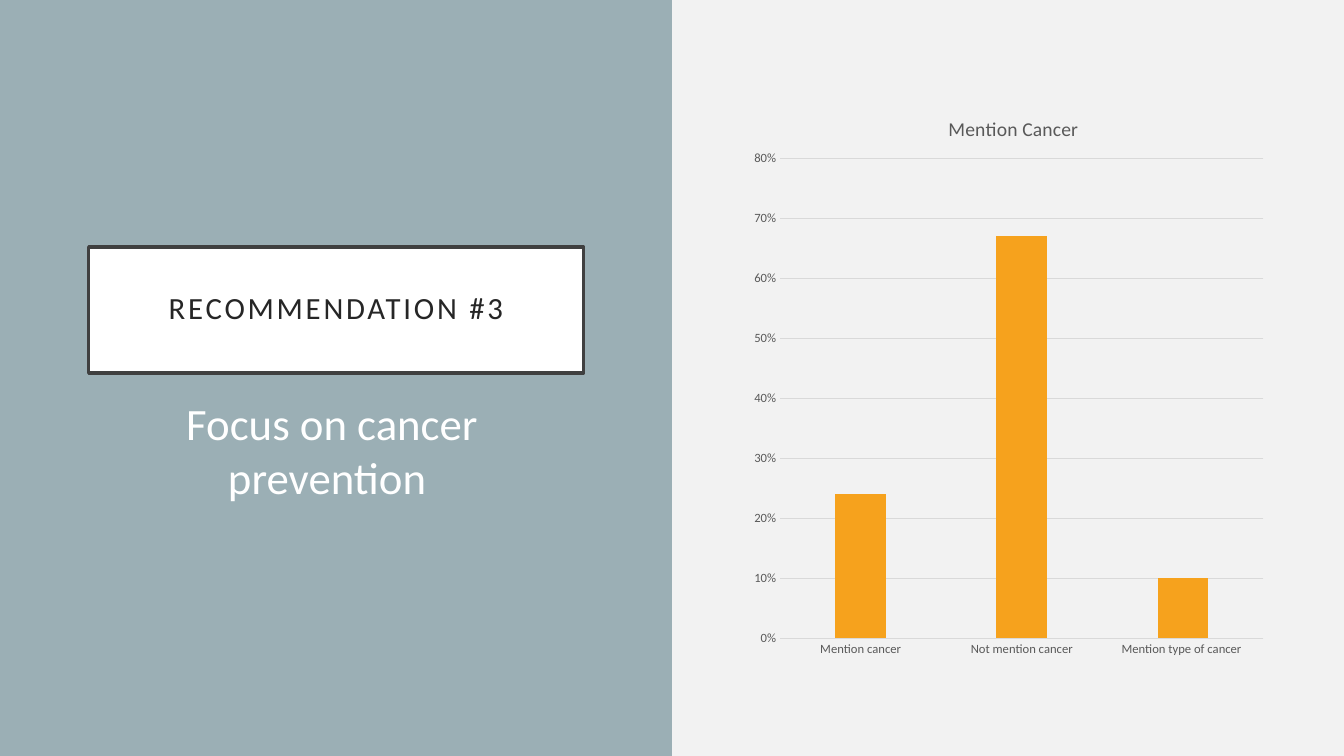
import dataclasses

import lxml.etree
import pptx
import pptx.chart.data
import pptx.dml.color
import pptx.enum.chart
import pptx.enum.shapes
import pptx.enum.text
import pptx.oxml
import pptx.oxml.ns
import pptx.util

CELL = pptx.util.Inches(1) / 12
COLS, ROWS = 160, 90


@dataclasses.dataclass(frozen=True)
class Theme:
    font: str = "Calibri"
    page: str = "F2F2F2"
    panel: str = "9BAFB5"
    white: str = "FFFFFF"
    border: str = "404040"
    ink: str = "262626"
    label: str = "595959"
    grid: str = "D9D9D9"
    bar: str = "F6A21D"
    title: float = 22
    body: float = 32
    head: float = 14
    axis: float = 9
    edge: float = 2.5
    hair: float = 0.75


@dataclasses.dataclass(frozen=True)
class Box:
    col: float
    row: float
    wide: float
    high: float
    fill: str = ""
    line: str = ""

    def place(self) -> list[int]:
        return [round(n * CELL) for n in (self.col, self.row, self.wide, self.high)]


THEME = Theme()
PANEL = Box(0, 0, COLS / 2, ROWS, THEME.panel)
TITLE = Box(10.56, 29.4, 58.92, 15, THEME.white, THEME.border)
BODY = Box(14.64, 46.56, 49.8, 28.8)
CHART = Box(88.44, 10.56, 63.24, 68.88)
DATA = {"Mention cancer": 0.24, "Not mention cancer": 0.67, "Mention type of cancer ": 0.1}


def color(code: str) -> pptx.dml.color.RGBColor:
    return pptx.dml.color.RGBColor.from_string(code)


def style(font, size: float, code: str) -> None:
    font.name = THEME.font
    font.size = pptx.util.Pt(size)
    font.bold = False
    font.color.rgb = color(code)


def stroke(line, code: str, width: float) -> None:
    line.color.rgb = color(code)
    line.width = pptx.util.Pt(width)


def draw(slide, box: Box):
    shape = slide.shapes.add_shape(pptx.enum.shapes.MSO_SHAPE.RECTANGLE, *box.place())
    shape.shadow.inherit = False
    shape.fill.solid()
    shape.fill.fore_color.rgb = color(box.fill)
    if box.line:
        stroke(shape.line, box.line, THEME.edge)
    else:
        shape.line.fill.background()
    return shape


def write(frame, text: str, *, size: float, code: str, inset: float = 0, space: float = 0,
          lead: float = 1, track: float = 0, middle: bool = False) -> None:
    frame.word_wrap = True
    anchor = pptx.enum.text.MSO_ANCHOR
    frame.vertical_anchor = anchor.MIDDLE if middle else anchor.TOP
    if inset:
        gap = pptx.util.Inches(inset)
        frame.margin_left = frame.margin_right = gap
        frame.margin_top = frame.margin_bottom = gap
    para = frame.paragraphs[0]
    para.alignment = pptx.enum.text.PP_ALIGN.CENTER
    para.space_before = pptx.util.Pt(space)
    para.line_spacing = lead
    run = para.add_run()
    run.text = text
    style(run.font, size, code)
    if track:
        run.font._element.set("spc", str(round(track * 100)))


def pin(item, **shares: float) -> None:
    name = pptx.oxml.ns.qn
    for old in item.findall(name("c:layout")):
        item.remove(old)
    layout = pptx.oxml.parse_xml(f'<c:layout {pptx.oxml.ns.nsdecls("c")}/>')
    manual = lxml.etree.SubElement(layout, name("c:manualLayout"))
    marks = {"xMode": "edge", "yMode": "edge", **shares}
    if "w" in shares:
        marks = {"layoutTarget": "inner", **marks}
    for key, value in marks.items():
        lxml.etree.SubElement(manual, name(f"c:{key}")).set("val", str(value))
    text = item.find(name("c:tx"))
    if text is None:
        item.insert(0, layout)
    else:
        text.addnext(layout)


def plot(slide, box: Box, data: dict[str, float]) -> None:
    enum = pptx.enum.chart
    source = pptx.chart.data.CategoryChartData(number_format="0%")
    source.categories = data.keys()
    source.add_series("Series 1", data.values())
    kind = enum.XL_CHART_TYPE.COLUMN_CLUSTERED
    chart = slide.shapes.add_chart(kind, *box.place(), source).chart
    style(chart.font, THEME.axis, THEME.label)
    chart.has_legend = False
    chart.has_title = True
    write(chart.chart_title.text_frame, "Mention Cancer", size=THEME.head, code=THEME.label)
    pin(chart.chart_title._element, x=0.38, y=0.04)
    pin(chart._chartSpace.chart.plotArea, x=0.07, y=0.12, w=0.91, h=0.83)

    bars = chart.plots[0]
    bars.gap_width, bars.overlap = 219, -27
    bars.vary_by_categories = False
    fill = bars.series[0].format.fill
    fill.solid()
    fill.fore_color.rgb = color(THEME.bar)

    for axis in (chart.category_axis, chart.value_axis):
        axis.major_tick_mark = axis.minor_tick_mark = enum.XL_TICK_MARK.NONE
        style(axis.tick_labels.font, THEME.axis, THEME.label)
    stroke(chart.category_axis.format.line, THEME.grid, THEME.hair)
    scale = chart.value_axis
    scale.minimum_scale, scale.maximum_scale, scale.major_unit = 0, 0.8, 0.1
    scale.tick_labels.number_format = "0%"
    scale.tick_labels.number_format_is_linked = False
    scale.format.line.fill.background()
    stroke(scale.major_gridlines.format.line, THEME.grid, THEME.hair)


def main() -> None:
    deck = pptx.Presentation()
    deck.slide_width, deck.slide_height = round(COLS * CELL), round(ROWS * CELL)
    slide = deck.slides.add_slide(deck.slide_layouts[6])
    slide.background.fill.solid()
    slide.background.fill.fore_color.rgb = color(THEME.page)
    draw(slide, PANEL)
    write(draw(slide, TITLE).text_frame, "RECOMMENDATION #3", size=THEME.title,
          code=THEME.ink, inset=0.2, lead=0.9, track=2, middle=True)
    write(slide.shapes.add_textbox(*BODY.place()).text_frame, "Focus on cancer prevention ",
          size=THEME.body, code=THEME.white, space=10)
    plot(slide, CHART, DATA)
    deck.save("out.pptx")


if __name__ == "__main__":
    main()
